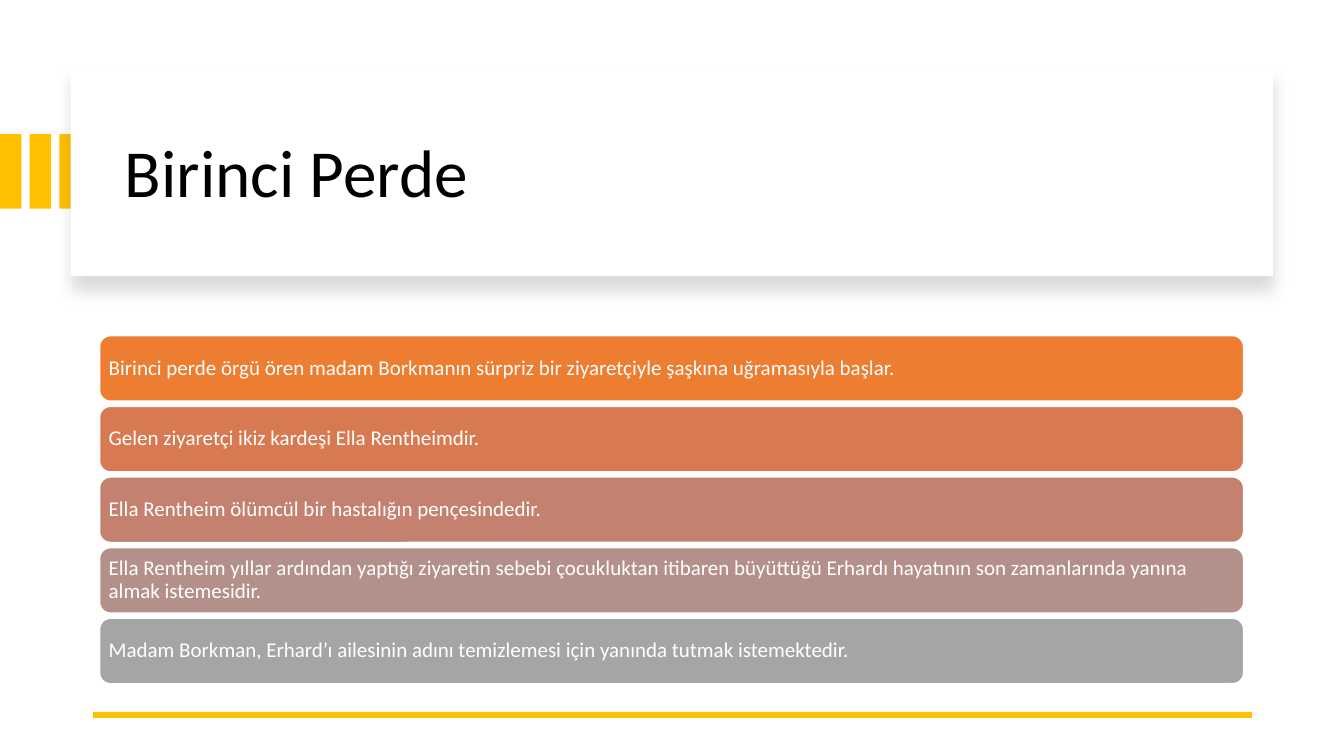
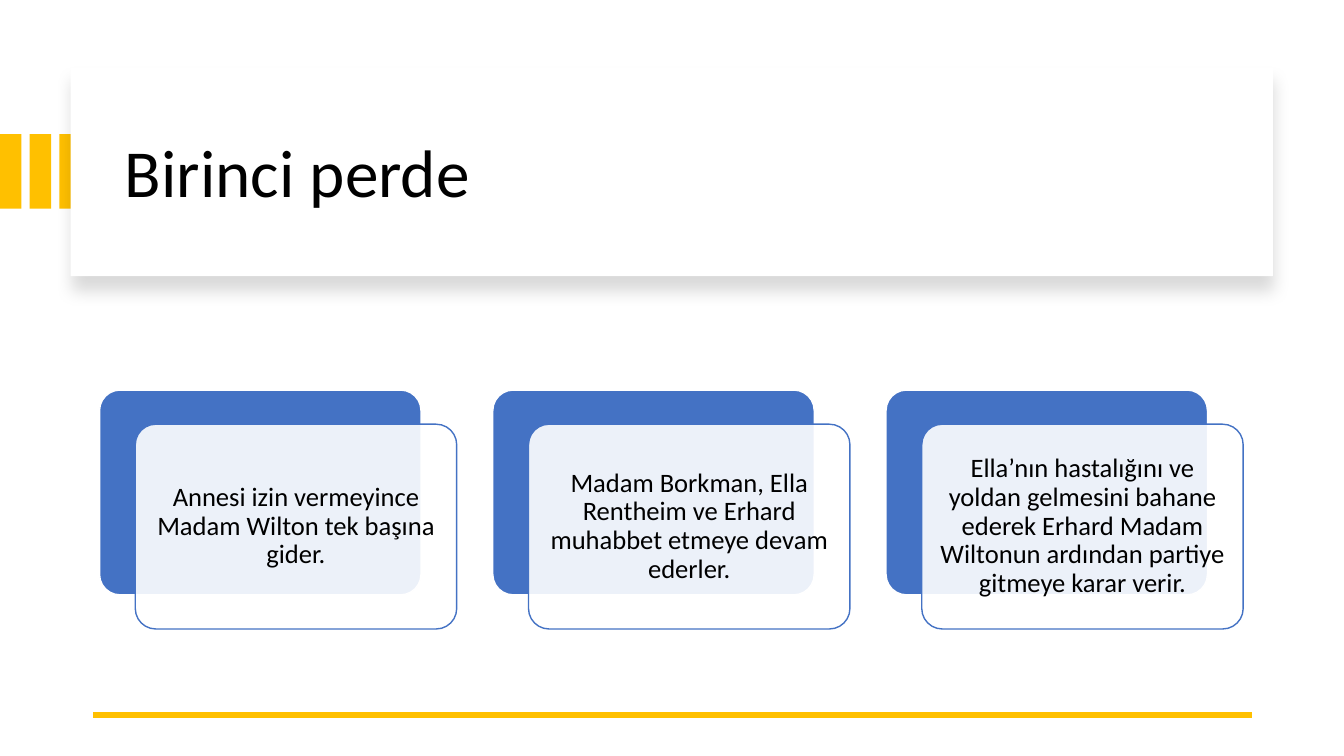
from lxml import etree
from pptx import Presentation
from pptx.dml.color import RGBColor
from pptx.enum.shapes import MSO_CONNECTOR, MSO_SHAPE
from pptx.enum.text import MSO_ANCHOR, MSO_AUTO_SIZE, PP_ALIGN
from pptx.oxml.ns import qn
from pptx.util import Cm, Pt

RECT, ROUNDED = MSO_SHAPE.RECTANGLE, MSO_SHAPE.ROUNDED_RECTANGLE
STRAIGHT = MSO_CONNECTOR.STRAIGHT
LEFT, CENTER = PP_ALIGN.LEFT, PP_ALIGN.CENTER
MIDDLE, NO_FIT = MSO_ANCHOR.MIDDLE, MSO_AUTO_SIZE.NONE
TITLE_ONLY = 5

COLOURS = {"accent": "FFC000", "white": "FFFFFF", "black": "000000", "blue": "4472C4"}
ROW_COLOURS = ["ED7D31", "D87A51", "C48170", "B4908B", "A5A5A5"]

EVENTS = [
    "Birinci perde örgü ören madam Borkmanın sürpriz bir ziyaretçiyle şaşkına uğramasıyla başlar.",
    "Gelen ziyaretçi ikiz kardeşi Ella Rentheimdir.",
    "Ella Rentheim ölümcül bir hastalığın pençesindedir.",
    "Ella Rentheim yıllar ardından yaptığı ziyaretin sebebi çocukluktan itibaren büyüttüğü "
    "Erhardı hayatının son zamanlarında yanına almak istemesidir.",
    "Madam Borkman, Erhard’ı ailesinin adını temizlemesi için yanında tutmak istemektedir.",
]
OUTCOMES = [
    "Annesi izin vermeyince Madam Wilton tek başına gider.",
    "Madam Borkman, Ella Rentheim ve Erhard muhabbet etmeye devam ederler.",
    "Ella’nın hastalığını ve yoldan gelmesini bahane ederek Erhard Madam Wiltonun "
    "ardından partiye gitmeye karar verir.",
]


def apply(target, values):
    for name, value in values.items():
        setattr(target, name, value)


def rgb(name):
    return RGBColor.from_string(COLOURS.get(name, name))


class Deck:
    FONT = "Calibri"
    CONTENT_LEFT = 2.51

    def __init__(self):
        self.prs = Presentation()
        apply(self.prs, {"slide_width": Cm(33.87), "slide_height": Cm(19.05)})
        self.slide = None

    def put_text(self, shape, text, size, colour, align, inset):
        """Fill a shape's text frame with one formatted paragraph."""
        frame = shape.text_frame
        margins = dict.fromkeys(("margin_left", "margin_top", "margin_right", "margin_bottom"), Cm(inset))
        apply(frame, {"text": text, "word_wrap": True, "auto_size": NO_FIT,
                      "vertical_anchor": MIDDLE, **margins})
        paragraph = frame.paragraphs[0]
        apply(paragraph, {"alignment": align, "line_spacing": 0.9})
        apply(paragraph.font, {"name": self.FONT, "size": Pt(size)})
        paragraph.font.color.rgb = rgb(colour)

    def box(self, kind, left, top, width, height, fill, line=None, corner=None):
        shape = self.slide.shapes.add_shape(kind, Cm(left), Cm(top), Cm(width), Cm(height))
        shape.shadow.inherit = False
        shape.fill.solid()
        shape.fill.fore_color.rgb = rgb(fill)
        if line:
            shape.line.color.rgb = rgb(line)
            shape.line.width = Pt(1)
        else:
            shape.line.fill.background()
        if corner:
            shape.adjustments[0] = corner
        return shape

    def set_opacity(self, shape, percent):
        colour = shape.element.spPr.find(qn("a:solidFill")).find(qn("a:srgbClr"))
        etree.SubElement(colour, qn("a:alpha"), val=str(percent * 1000))

    def cast_shadow(self, shape):
        effects = shape.element.spPr.find(qn("a:effectLst"))
        shadow = etree.SubElement(effects, qn("a:outerShdw"), blurRad=str(Pt(11)), dist=str(Pt(10)),
                                  dir="5400000", algn="t", rotWithShape="0")
        colour = etree.SubElement(shadow, qn("a:srgbClr"), val=COLOURS["black"])
        etree.SubElement(colour, qn("a:alpha"), val="15000")

    def footer_rule(self):
        rule = self.slide.shapes.add_connector(STRAIGHT, Cm(31.55), Cm(18.01), Cm(2.34), Cm(18.01))
        rule.line.color.rgb = rgb("accent")
        rule.line.width = Pt(4.5)
        etree.SubElement(rule.element.spPr, qn("a:effectLst"))

    def new_slide(self, heading):
        """Start a slide with side bars, title panel, title and footer rule."""
        self.slide = self.prs.slides.add_slide(self.prs.slide_layouts[TITLE_ONLY])
        for i in range(3):
            self.box(RECT, 0.75 * i, 3.38, 0.54, 1.88, "accent")
        self.cast_shadow(self.box(RECT, 1.78, 1.7, 30.3, 5.26, "white"))
        title = self.slide.shapes.title
        apply(title, {"left": Cm(2.9), "top": Cm(2.26), "width": Cm(28.27), "height": Cm(4.32)})
        self.put_text(title, heading, 48, "black", LEFT, 0.25)
        # Bring the title in front of its panel
        title.element.getparent().append(title.element)
        self.footer_rule()

    def row(self, index, text, colour):
        bar = self.box(ROUNDED, self.CONTENT_LEFT, 8.46 + 1.78 * index, 28.83, 1.65, colour, "white")
        self.put_text(bar, text, 15, "white", LEFT, 0.15)

    def card(self, index, text):
        left, top, size = self.CONTENT_LEFT + 9.91 * index, 9.83, (8.1, 5.16)
        self.box(ROUNDED, left, top, *size, "blue", "white", 0.1)
        front = self.box(ROUNDED, left + 0.9, top + 0.86, *size, "white", "blue", 0.1)
        self.set_opacity(front, 90)
        self.put_text(front, text, 19, "black", CENTER, 0.2)


def main():
    deck = Deck()

    # Opening events as stacked rows
    deck.new_slide("Birinci Perde")
    for index, (event, colour) in enumerate(zip(EVENTS, ROW_COLOURS)):
        deck.row(index, event, colour)

    # Outcomes as layered cards
    deck.new_slide("Birinci perde")
    for index, outcome in enumerate(OUTCOMES):
        deck.card(index, outcome)

    deck.prs.save("out.pptx")


if __name__ == "__main__":
    main()
